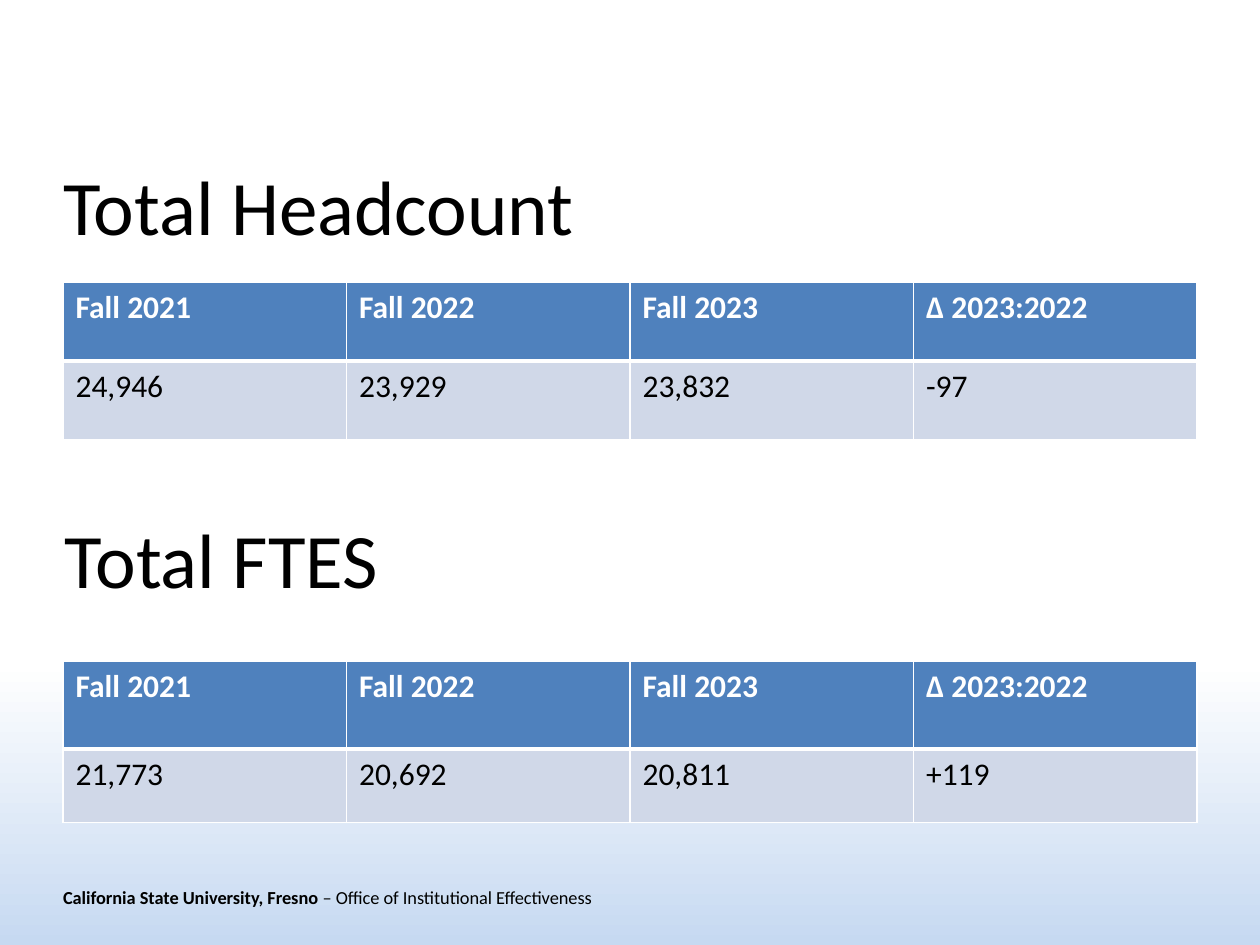
from lxml import etree
from pptx import Presentation
from pptx.dml.color import RGBColor
from pptx.enum.text import MSO_ANCHOR as ANCHOR, PP_ALIGN as ALIGN
from pptx.oxml.ns import qn
from pptx.util import Pt

COLORS = {"text": "000000", "white": "FFFFFF", "sky": "C6D9F1",
          "header": "4F81BD", "body": "D0D8E8"}
FONT = "Calibri"
HEADINGS = ["Fall 2021", "Fall 2022", "Fall 2023", "Δ 2023:2022"]
HEADCOUNT = ["24,946", "23,929", "23,832", "-97"]
FTES = ["21,773", "20,692", "20,811", "+119"]


def rgb(name):
    return RGBColor.from_string(COLORS[name])


def style(p, size, color="text", bold=None):
    p.alignment = ALIGN.LEFT
    p.font.name = FONT
    p.font.size = Pt(size)
    p.font.color.rgb = rgb(color)
    p.font.bold = bold


def place(sp, x, y, w, h):
    sp.left, sp.top, sp.width, sp.height = Pt(x), Pt(y), Pt(w), Pt(h)


def center_flush(tf):
    tf.word_wrap = True
    tf.vertical_anchor = ANCHOR.MIDDLE
    tf.margin_left = tf.margin_right = 0


def set_background(slide):
    fill = slide.background.fill
    fill.gradient()
    fill.gradient_angle = 270
    for stop, (pos, color) in zip(fill.gradient_stops, [(0.7, "white"), (1, "sky")]):
        stop.position = pos
        stop.color.rgb = rgb(color)


def add_title(slide, text, x, y, w, h):
    sp = slide.shapes.title
    place(sp, x, y, w, h)
    center_flush(sp.text_frame)
    sp.text_frame.text = text
    style(sp.text_frame.paragraphs[0], 44)


def add_heading(slide, text, x, y, w, h):
    tf = slide.shapes.add_textbox(Pt(x), Pt(y), Pt(w), Pt(h)).text_frame
    tf.word_wrap = False
    tf.text = text
    style(tf.paragraphs[0], 44)


def add_footer(slide, x, y, w, h):
    tf = slide.shapes.add_textbox(Pt(x), Pt(y), Pt(w), Pt(h)).text_frame
    center_flush(tf)
    p = tf.paragraphs[0]
    style(p, 10.5)
    for text, bold in [("California State University, Fresno ", True),
                       ("– Office of Institutional Effectiveness", False)]:
        r = p.add_run()
        r.text = text
        r.font.bold = bold


def set_borders(cell, top, bottom):
    tcPr = cell._tc.get_or_add_tcPr()
    for side, width in [("L", 1), ("R", 1), ("T", top), ("B", bottom)]:
        ln = etree.SubElement(tcPr, qn(f"a:ln{side}"), w=str(Pt(width)))
        fill = etree.SubElement(ln, qn("a:solidFill"))
        etree.SubElement(fill, qn("a:srgbClr"), val=COLORS["white"])


def add_counts(slide, values, x, y, w, row_heights):
    rows = [(HEADINGS, "header", "white", True, 1, 3),
            (values, "body", "text", False, 3, 1)]
    table = slide.shapes.add_table(len(rows), len(HEADINGS), Pt(x), Pt(y),
                                   Pt(w), Pt(sum(row_heights))).table
    for i, (texts, fill, color, bold, top, bottom) in enumerate(rows):
        table.rows[i].height = Pt(row_heights[i])
        for j, text in enumerate(texts):
            cell = table.cell(i, j)
            cell.text = text
            style(cell.text_frame.paragraphs[0], 18, color, bold)
            set_borders(cell, top, bottom)
            cell.fill.solid()
            cell.fill.fore_color.rgb = rgb(fill)


def main():
    prs = Presentation()
    prs.slide_width, prs.slide_height = Pt(720), Pt(540)
    slide = prs.slides.add_slide(prs.slide_layouts[5])
    left, width = 36, 648
    set_background(slide)
    add_footer(slide, left, 498, 414, 29)
    add_title(slide, "Total Headcount", left, 72, width, 90)
    add_counts(slide, HEADCOUNT, left, 161.3, width, [45, 45])
    add_heading(slide, "Total FTES", 30, 288.7, 196, 60.5)
    add_counts(slide, FTES, left, 378, width, [50, 42])
    prs.save("out.pptx")


if __name__ == "__main__":
    main()
